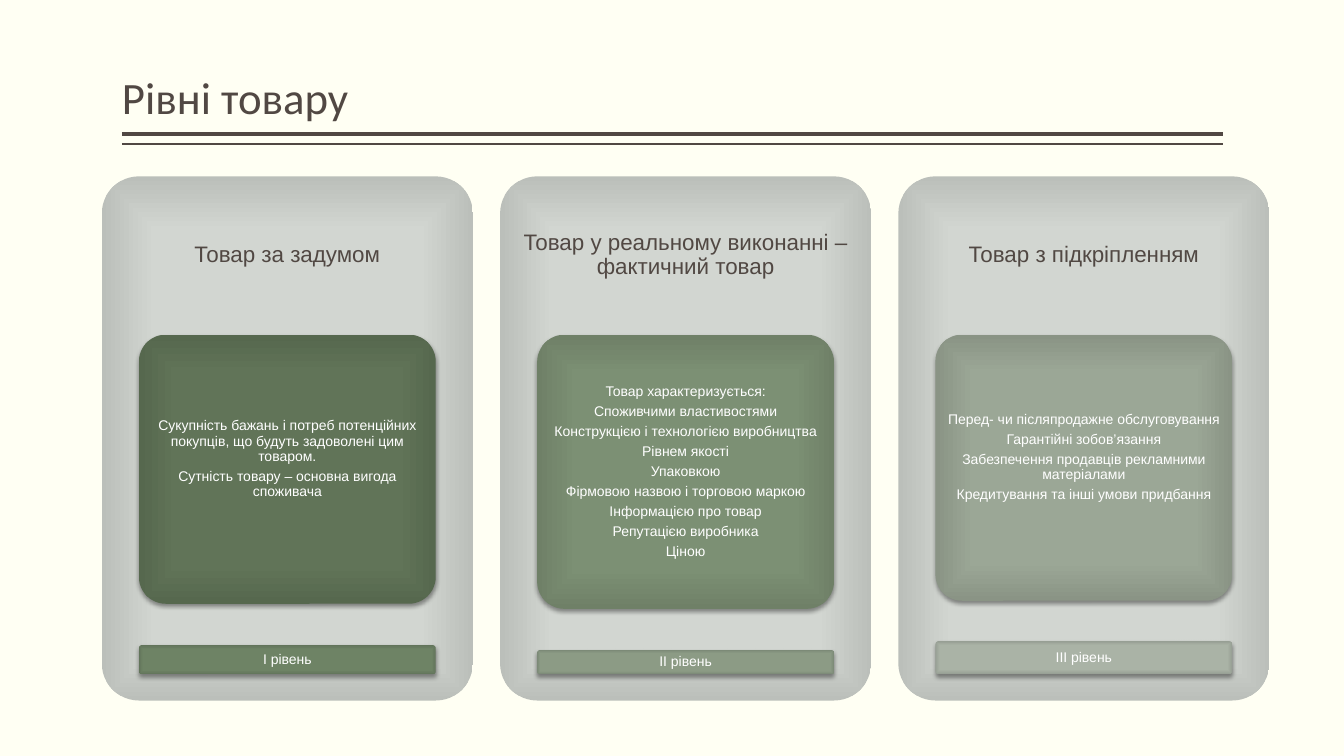
from dataclasses import dataclass

from lxml import etree
from pptx import Presentation
from pptx.dml.color import RGBColor
from pptx.enum.shapes import MSO_CONNECTOR, MSO_SHAPE
from pptx.enum.text import MSO_ANCHOR, PP_ALIGN
from pptx.oxml import parse_xml
from pptx.oxml.ns import qn
from pptx.util import Inches, Pt

ROUND = MSO_SHAPE.ROUNDED_RECTANGLE
STRAIGHT = MSO_CONNECTOR.STRAIGHT
MIDDLE, BOTTOM = MSO_ANCHOR.MIDDLE, MSO_ANCHOR.BOTTOM
LEFT, CENTER = PP_ALIGN.LEFT, PP_ALIGN.CENTER
NS = 'xmlns:a="http://schemas.openxmlformats.org/drawingml/2006/main"'

TITLE = "Рівні товару"
# heading, body lines, label, body height, label height, space kept under the body,
# body gradient, label gradient
LEVELS = [
    ("Товар за задумом",
     ["Сукупність бажань і потреб потенційних покупців, що будуть задоволені цим товаром.",
      "Сутність товару – основна вигода споживача"],
     "І рівень", 2.67, 0.29, 0.2,
     ("617559", "617458", "56684E"), ("6F8466", "6E8365", "62745A")),
    ("Товар у реальному виконанні – фактичний товар",
     ["Товар характеризується:",
      "Споживчими властивостями",
      "Конструкцією і технологією виробництва",
      "Рівнем якості",
      "Упаковкою",
      "Фірмовою назвою і торговою маркою",
      "Інформацією про товар",
      "Репутацією виробника",
      "Ціною"],
     "ІІ рівень", 2.72, 0.24, 0,
     ("7E9175", "7C9074", "6F8067"), ("8D9D86", "8C9B85", "7C8A77")),
    ("Товар з підкріпленням",
     ["Перед- чи післяпродажне обслуговування",
      "Гарантійні зобов’язання",
      "Забезпечення продавців рекламними матеріалами",
      "Кредитування та інші умови придбання"],
     "ІІІ рівень", 2.64, 0.33, 0.2,
     ("9CA897", "9BA796", "8A9485"), ("ABB4A8", "AAB3A6", "979F94")),
]


@dataclass(frozen=True)
class Theme:
    back: str = "FFFFF3"
    ink: str = "514843"
    light: str = "FFFFFF"
    card: tuple = ("D4D8D2", "D2D6D1", "BBBFBA")
    head_font: str = "Calibri"
    font: str = "Arial"
    title: int = 32
    head: int = 16
    body: float = 10


THEME = Theme()
WIDE, HIGH = 13.33, 7.5
RULE_X, RULE_W = 1.21, 10.92
CARD_X, CARD_Y, CARD_W, CARD_H = 1.01, 1.75, 3.68, 5.2
STEP = 3.95
HEAD_H = CARD_H * 0.3
PART_W = CARD_W * 0.8
PART_Y = CARD_Y + HEAD_H + 0.01
LABEL_END = CARD_Y + CARD_H * 0.95

deck = Presentation()
deck.slide_width, deck.slide_height = Inches(WIDE), Inches(HIGH)
slide = deck.slides.add_slide(deck.slide_layouts[6])
slide.background.fill.solid()
slide.background.fill.fore_color.rgb = RGBColor.from_string(THEME.back)


def write(shape, lines, size, color, font=THEME.font, align=CENTER,
          anchor=MIDDLE, pad=(0.03, 0.02, 0.03, 0.02), after=3.5):
    frame = shape.text_frame
    frame.word_wrap = True
    frame.vertical_anchor = anchor
    (frame.margin_left, frame.margin_top,
     frame.margin_right, frame.margin_bottom) = map(Inches, pad)
    for i, line in enumerate(lines):
        para = frame.add_paragraph() if i else frame.paragraphs[0]
        para.alignment = align
        para.line_spacing = 0.9
        if i < len(lines) - 1:
            para.space_after = Pt(after)
        run = para.add_run()
        run.text = line
        run.font.name, run.font.size = font, Pt(size)
        run.font.color.rgb = RGBColor.from_string(color)


def text_box(x, y, w, h):
    return slide.shapes.add_textbox(*map(Inches, (x, y, w, h)))


def panel(x, y, w, h, tones, lift=True):
    """Rounded box shaded from its centre outwards; lift adds a soft shadow."""
    box = slide.shapes.add_shape(ROUND, *map(Inches, (x, y, w, h)))
    box.adjustments[0] = 0.1
    box.line.fill.background()
    box.shadow.inherit = False
    stops = "".join(f'<a:gs pos="{pos}"><a:srgbClr val="{tone}"/></a:gs>'
                    for pos, tone in zip((0, 71000, 100000), tones))
    props = box._element.spPr
    props.find(qn("a:prstGeom")).addnext(parse_xml(
        f'<a:gradFill {NS} rotWithShape="1"><a:gsLst>{stops}</a:gsLst>'
        '<a:path path="rect"><a:fillToRect l="50000" t="50000" r="50000" b="50000"/>'
        '</a:path></a:gradFill>'))
    if lift:
        props.find(qn("a:effectLst")).append(parse_xml(
            f'<a:outerShdw {NS} blurRad="{Pt(3.1)}" dist="{Pt(2)}" dir="5400000" '
            'rotWithShape="0"><a:srgbClr val="000000"><a:alpha val="38000"/>'
            '</a:srgbClr></a:outerShdw>'))
    return box


def rule(y, weight):
    line = slide.shapes.add_connector(
        STRAIGHT, *map(Inches, (RULE_X, y, RULE_X + RULE_W, y)))
    line.line.color.rgb = RGBColor.from_string(THEME.ink)
    line.line.width = Pt(weight)
    etree.SubElement(line._element.spPr, qn("a:effectLst"))


for y, weight in ((1.33, 3), (1.43, 1)):
    rule(y, weight)
write(text_box(RULE_X, 0.08, RULE_W, 1.2), [TITLE], THEME.title, THEME.ink,
      font=THEME.head_font, align=LEFT, anchor=BOTTOM, pad=(0, 0.05, 0, 0.05))

for col, (head, lines, label, body_h, label_h, rest, dark, pale) in enumerate(LEVELS):
    x = CARD_X + col * STEP
    part_x = x + (CARD_W - PART_W) / 2
    panel(x, CARD_Y, CARD_W, CARD_H, THEME.card, lift=False)
    write(text_box(x, CARD_Y, CARD_W, HEAD_H), [head], THEME.head, THEME.ink,
          pad=(0.07,) * 4)
    write(panel(part_x, PART_Y, PART_W, body_h, dark), lines, THEME.body,
          THEME.light, pad=(0.03, 0.02, 0.03, 0.02 + rest))
    write(panel(part_x, LABEL_END - label_h, PART_W, label_h, pale), [label],
          THEME.body, THEME.light)

deck.save("out.pptx")
